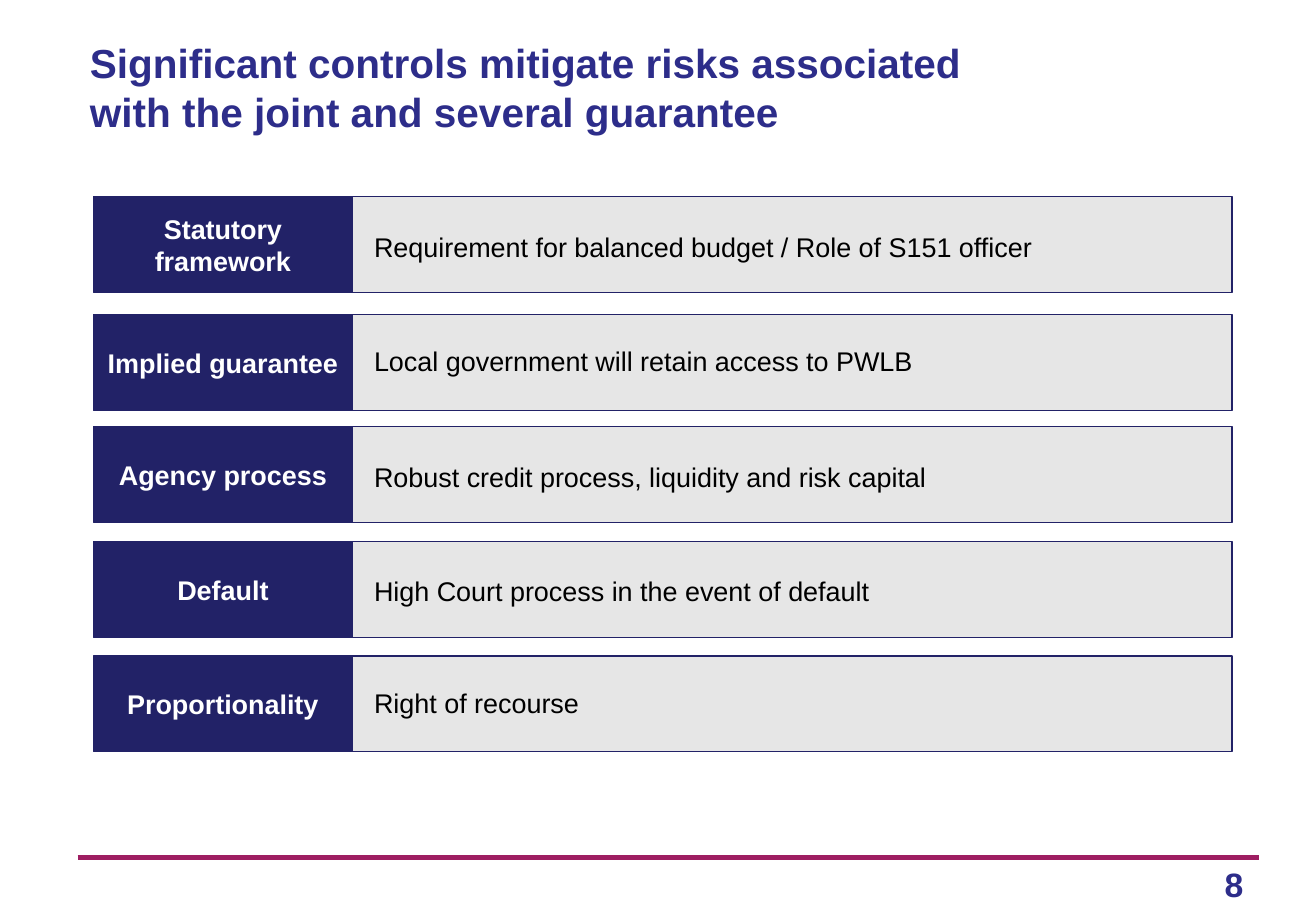
from pptx import Presentation
from pptx.dml.color import RGBColor
from pptx.enum.shapes import MSO_CONNECTOR, MSO_SHAPE
from pptx.enum.text import MSO_ANCHOR, MSO_AUTO_SIZE, PP_ALIGN
from pptx.oxml.ns import qn
from pptx.util import Inches, Pt
from lxml import etree

NAVY, INDIGO, GREY, CRIMSON = "222267", "2D2D8A", "E6E6E6", "9E1E62"
ROW_HEIGHT = 0.79

# Row top, label, description top, description width, description
CONTROLS = [
    (1.62, "Statutory framework", 1.85, 5.69,
     "Requirement for balanced budget / Role of S151 officer"),
    (2.59, "Implied guarantee", 2.79, 4.74,
     "Local government will retain access to PWLB"),
    (3.51, "Agency process", 3.74, 4.85,
     "Robust credit process, liquidity and risk capital"),
    (4.46, "Default", 4.68, 4.33,
     "High Court process in the event of default"),
    (5.4, "Proportionality", 5.6, 1.91, "Right of recourse"),
]


def write(shape, text, size, color, bold=False, align=PP_ALIGN.LEFT):
    paragraph = shape.text_frame.paragraphs[0]
    paragraph.alignment = align
    run = paragraph.add_run()
    run.text = text
    run.font.name = "Arial"
    run.font.size = Pt(size)
    run.font.bold = bold
    run.font.color.rgb = RGBColor.from_string(color)


def add_bar(left, top, width, fill):
    bar = shapes.add_shape(MSO_SHAPE.RECTANGLE, Inches(left), Inches(top),
                           Inches(width), Inches(ROW_HEIGHT))
    bar.shadow.inherit = False
    bar.fill.solid()
    bar.fill.fore_color.rgb = RGBColor.from_string(fill)
    bar.line.color.rgb = RGBColor.from_string(NAVY)
    bar.line.width = Pt(0.75)
    return bar


prs = Presentation()
prs.slide_width, prs.slide_height = Inches(10.83), Inches(7.5)
slide = prs.slides.add_slide(prs.slide_layouts[5])
shapes = slide.shapes

title = shapes.title
title.left, title.top = Inches(0.64), Inches(0.36)
title.width, title.height = Inches(7.38), Inches(0.71)
title.text_frame.word_wrap = True
title.text_frame.auto_size = MSO_AUTO_SIZE.NONE
title.text_frame.vertical_anchor = MSO_ANCHOR.MIDDLE
write(title, "Significant controls mitigate risks associated "
             "with the joint and several guarantee", 24, INDIGO, bold=True)

for row_top, name, text_top, text_width, detail in CONTROLS:
    add_bar(1.01, row_top, 9.13, GREY)

    label = add_bar(0.77, row_top, 2.13, NAVY)
    label.text_frame.word_wrap = True
    label.text_frame.vertical_anchor = MSO_ANCHOR.MIDDLE
    write(label, name, 16, "FFFFFF", bold=True, align=PP_ALIGN.CENTER)

    description = shapes.add_textbox(Inches(2.98), Inches(text_top),
                                     Inches(text_width), Inches(0.37))
    description.text_frame.word_wrap = False
    description.text_frame.auto_size = MSO_AUTO_SIZE.SHAPE_TO_FIT_TEXT
    write(description, detail, 16, "000000")

footer_rule = shapes.add_connector(MSO_CONNECTOR.STRAIGHT, Inches(0.64),
                                   Inches(7.06), Inches(10.36), Inches(7.06))
footer_rule.line.color.rgb = RGBColor.from_string(CRIMSON)
footer_rule.line.width = Pt(2.5)
etree.SubElement(footer_rule._element.spPr, qn("a:effectLst"))

page_number = shapes.add_textbox(Inches(9.98), Inches(7.06),
                                 Inches(0.75), Inches(0.4))
page_number.text_frame.word_wrap = True
write(page_number, "8", 20, INDIGO, bold=True)

prs.save("out.pptx")
